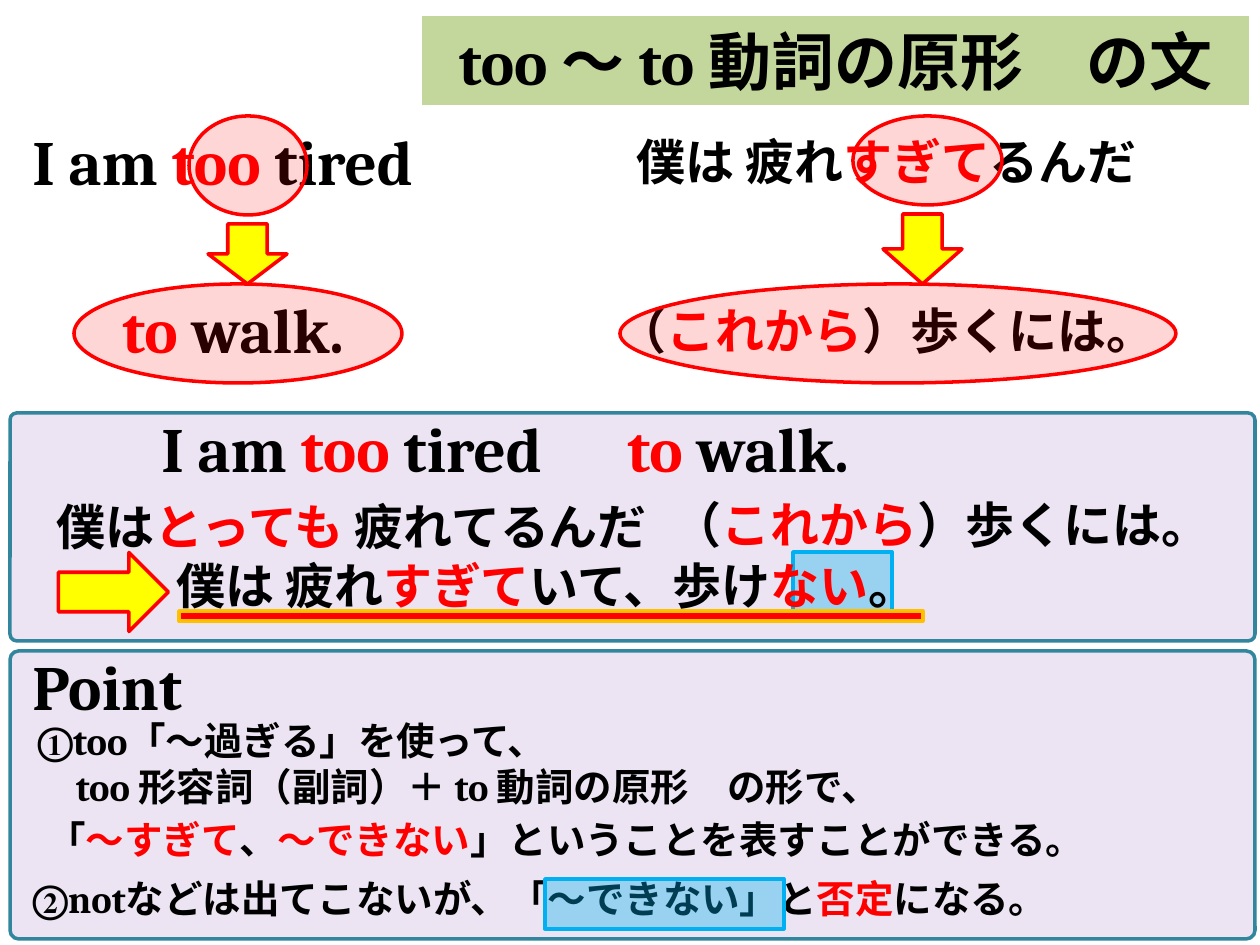
from pptx import Presentation
from pptx import util as u
from pptx.dml.color import RGBColor
from pptx.enum import shapes, text
from pptx.oxml.ns import qn
from lxml import etree

PX = 914400 // 126
FONT = "Cambria"
BLACK, RED, YELLOW = "000000", "FF0000", "FFFF00"
TITLE = ("too ～ to 動詞の原形　の文", (422, 16, 827, 89))

# Text between asterisks is red
TIRED = "I am *too *tired"
WALK = "*to* walk."
FROM_NOW = "（*これから*）歩くには。"

# Shape styles: preset, fill, opacity in percent, line
STYLES = {
    "panel": ("ROUNDED_RECTANGLE", "7030A0", 13, "31859C"),
    "highlight": ("RECTANGLE", "00B0F0", 35, "00B0F0"),
    "ring": ("OVAL", RED, 16, RED),
    "arrow": ("DOWN_ARROW", YELLOW, 100, RED),
    "underline": ("RECTANGLE", RED, 100, "FFC000"),
}

# Shapes: (style, box in px[, rotation]); texts: (lines, box in px, size, wrap)
EXAMPLE = [
    ([TIRED], (20, 116, 494, 89), 36, False),
    ([WALK], (110, 284, 287, 89), 36, False),
    ("ring", (189, 116, 118, 99)),
    ("arrow", (208, 224, 79, 60)),
    ("ring", (74, 284, 328, 99)),
]
TRANSLATION = [
    (["僕は 疲れ*すぎて*るんだ"], (624, 125, 537, 72), 28, False),
    ("ring", (853, 116, 149, 89)),
    ("arrow", (883, 214, 79, 70)),
    ([FROM_NOW], (605, 294, 572, 72), 28, False),
    ("ring", (620, 284, 556, 99)),
]
MEANING = [
    ("panel", (10, 413, 1245, 228)),
    ("highlight", (793, 552, 99, 69)),
    ([TIRED], (149, 403, 494, 89), 36, False),
    ([WALK], (615, 403, 287, 89), 36, False),
    (["僕は*とっても *疲れてるんだ"], (44, 490, 636, 72), 28, False),
    ([FROM_NOW], (660, 488, 572, 72), 28, False),
    (["僕は 疲れ*すぎて*いて、歩け*ない*。"], (164, 549, 785, 72), 28, False),
    ("arrow", (74, 537, 79, 110), 270),
    ("underline", (179, 611, 744, 10)),
]
POINT = [
    ("panel", (10, 651, 1245, 288)),
    (["Point"], (20, 641, 207, 89), 36, False),
    (["①too「～過ぎる」を使って、", "　too 形容詞（副詞）＋ to 動詞の原形　の形で、"],
     (25, 711, 1225, 106), 22, True),
    (["「*～すぎて*、*～できない*」ということを表すことができる。"],
     (35, 810, 1225, 59), 22, True),
    (["②notなどは出てこないが、「～できない」と*否定*になる。"],
     (20, 869, 1225, 59), 22, True),
    ("highlight", (545, 879, 239, 50)),
]


def color(value):
    return RGBColor.from_string(value)


def scale(box):
    return [u.Emu(side * PX) for side in box]


def format_run(run, size, value):
    font = run.font
    font.name, font.size, font.bold = FONT, u.Pt(size), True
    font.color.rgb = color(value)


def add_text(slide, lines, box, size, wrap):
    frame = slide.shapes.add_textbox(*scale(box)).text_frame
    frame.word_wrap = wrap
    frame.auto_size = text.MSO_AUTO_SIZE.SHAPE_TO_FIT_TEXT
    for index, line in enumerate(lines):
        paragraph = frame.add_paragraph() if index else frame.paragraphs[0]
        for position, part in enumerate(line.split("*")):
            if part:
                run = paragraph.add_run()
                run.text = part
                format_run(run, size, RED if position % 2 else BLACK)


def add_shape(slide, style, box, rotation=0):
    preset, fill, opacity, line = STYLES[style]
    shape = slide.shapes.add_shape(shapes.MSO_SHAPE[preset], *scale(box))
    shape.shadow.inherit = False
    shape.rotation = rotation
    shape.fill.solid()
    shape.fill.fore_color.rgb = color(fill)
    shape.line.color.rgb = color(line)
    shape.line.width = u.Pt(2)
    if style == "panel":
        shape.adjustments[0] = 0.03
    if opacity < 100:
        fill_color = shape._element.spPr.find(qn("a:solidFill"))[0]
        etree.SubElement(fill_color, qn("a:alpha"), val=str(opacity * 1000))


def add_title(slide, wording, box):
    title = slide.shapes.title
    title.left, title.top, title.width, title.height = scale(box)
    title.fill.solid()
    title.fill.fore_color.rgb = color("C3D69B")
    frame = title.text_frame
    frame.text = wording
    frame.word_wrap = True
    frame.auto_size = text.MSO_AUTO_SIZE.NONE
    frame.vertical_anchor = text.MSO_ANCHOR.MIDDLE
    paragraph = frame.paragraphs[0]
    paragraph.alignment = text.PP_ALIGN.CENTER
    format_run(paragraph.runs[0], 36, BLACK)


def main():
    presentation = Presentation()
    presentation.slide_width, presentation.slide_height = u.Inches(10), u.Inches(7.5)
    slide = presentation.slides.add_slide(presentation.slide_layouts[5])
    add_title(slide, *TITLE)
    # Parts that begin with a list of lines are texts
    for part in EXAMPLE + TRANSLATION + MEANING + POINT:
        add = add_text if isinstance(part[0], list) else add_shape
        add(slide, *part)
    presentation.save("out.pptx")


if __name__ == "__main__":
    main()
